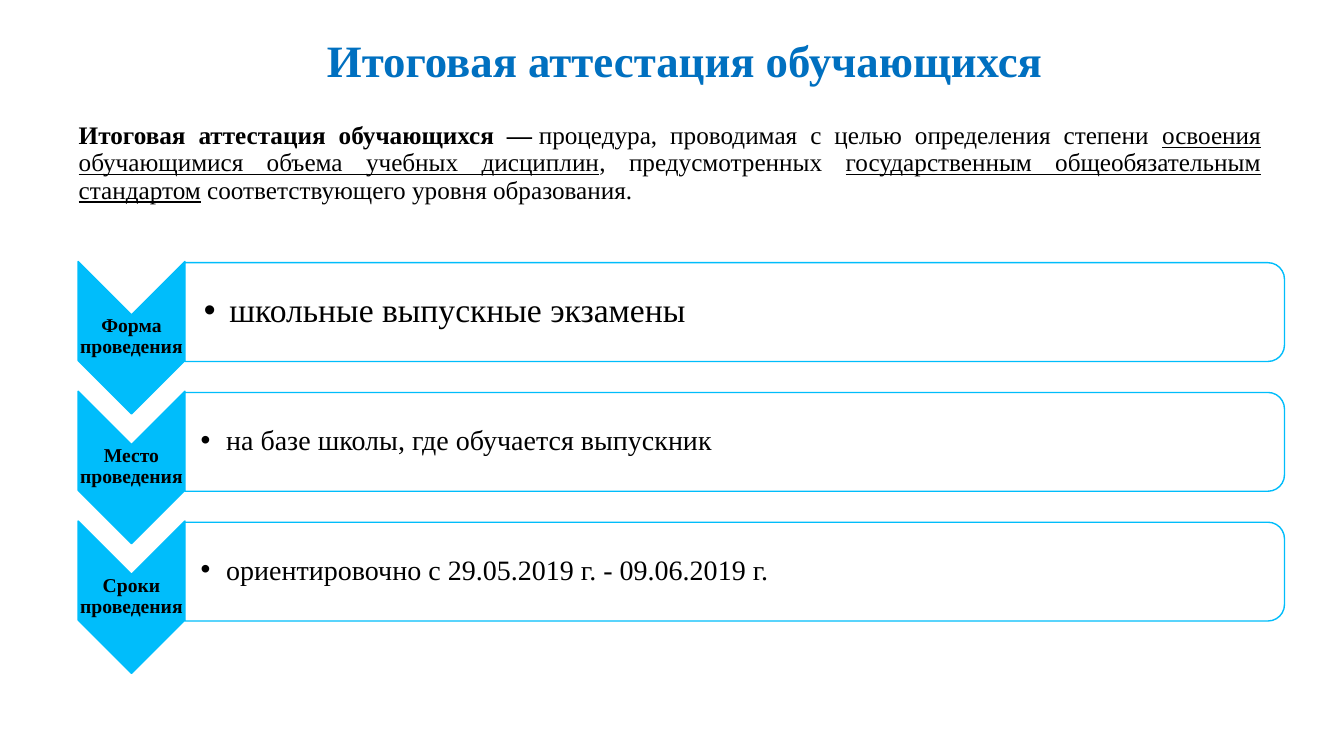
from lxml import etree
from pptx import Presentation
from pptx.dml.color import RGBColor
from pptx.enum.shapes import MSO_SHAPE as Shape
from pptx.enum.text import MSO_ANCHOR as Anchor, MSO_AUTO_SIZE as AutoSize, PP_ALIGN as Align
from pptx.oxml.ns import qn
from pptx.util import Cm, Pt

FONT = "Times New Roman"
BLACK, WHITE, BLUE, CYAN = "000000", "FFFFFF", "0070C0", "00BDFB"

TITLE = "Итоговая аттестация обучающихся"
DEFINITION = [
    ("Итоговая аттестация обучающихся —\u00a0", "bold"),
    ("процедура, проводимая с целью определения степени ", ""),
    ("освоения обучающимися объема учебных дисциплин", "underline"),
    (", предусмотренных ", ""),
    ("государственным общеобязательным стандартом", "underline"),
    (" соответствующего уровня образования.", ""),
]
# label, detail, detail size in points, left inset in cm
STEPS = [
    ("Форма проведения", "школьные выпускные экзамены", 24, 0.48),
    ("Место проведения", "на базе школы, где обучается выпускник", 20, 0.4),
    ("Сроки проведения", "ориентировочно с 29.05.2019 г. - 09.06.2019 г.", 20, 0.4),
]
STEP_PITCH = 3.27


def color(value):
    return RGBColor.from_string(value)


class AttestationPage:
    def __init__(self, deck):
        self.page = deck.slides.add_slide(deck.slide_layouts[1])

    def place(self, shape, left, top, width, height):
        shape.left, shape.top = Cm(left), Cm(top)
        shape.width, shape.height = Cm(width), Cm(height)

    def style_span(self, span, size, tint=BLACK, bold=False, underline=False):
        font = span.font
        font.name, font.size, font.bold, font.underline = FONT, Pt(size), bold, underline
        font.color.rgb = color(tint)

    def style_para(self, para, align, after=0.0):
        para.alignment = align
        para.line_spacing = 0.9
        para.space_before, para.space_after = Pt(0), Pt(after)

    def style_frame(self, frame, anchor):
        frame.word_wrap = True
        frame.auto_size = AutoSize.NONE
        frame.vertical_anchor = anchor

    def set_bullet(self, para, indent, mark=None):
        """Set a hanging bullet, or no bullet when mark is None."""
        props = para._p.get_or_add_pPr()
        props.set("marL", str(Cm(indent)))
        props.set("indent", str(-Cm(indent)))
        if mark:
            etree.SubElement(props, qn("a:buFont")).set("typeface", "Arial")
            etree.SubElement(props, qn("a:buChar")).set("char", mark)
        else:
            etree.SubElement(props, qn("a:buNone"))

    def title(self, text, *area):
        shape = self.page.shapes.title
        self.place(shape, *area)
        frame = shape.text_frame
        frame.text = text
        self.style_frame(frame, Anchor.TOP)
        para = frame.paragraphs[0]
        self.style_para(para, Align.CENTER)
        self.style_span(para.runs[0], 32, BLUE, bold=True)

    def body(self, parts, *area):
        shape = self.page.placeholders[1]
        self.place(shape, *area)
        self.style_frame(shape.text_frame, Anchor.TOP)
        para = shape.text_frame.paragraphs[0]
        self.style_para(para, Align.JUSTIFY, 12)
        self.set_bullet(para, 0)
        for text, style in parts:
            span = para.add_run()
            span.text = text
            self.style_span(span, 18, bold=style == "bold", underline=style == "underline")

    def turned_shape(self, kind, fill, left, top, width, height, opacity=100):
        """Add a shape turned by 90 degrees that covers the given area."""
        shift = (width - height) / 2
        shape = self.page.shapes.add_shape(
            kind, Cm(left + shift), Cm(top - shift), Cm(height), Cm(width))
        shape.rotation = 90
        shape.shadow.inherit = False
        shape.fill.solid()
        shape.fill.fore_color.rgb = color(fill)
        shape.line.color.rgb = color(CYAN)
        shape.line.width = Pt(1)
        if opacity < 100:
            tint = shape._element.spPr.find(qn("a:solidFill"))[0]
            etree.SubElement(tint, qn("a:alpha")).set("val", str(opacity * 1000))

    def text(self, text, area, size, align, inset=0.03, bold=False, bullet=None):
        box = self.page.shapes.add_textbox(*map(Cm, area))
        frame = box.text_frame
        frame.text = text
        self.style_frame(frame, Anchor.MIDDLE)
        frame.margin_left = Cm(inset)
        frame.margin_top = frame.margin_right = frame.margin_bottom = Cm(0.03)
        para = frame.paragraphs[0]
        self.style_para(para, align)
        if bullet:
            self.set_bullet(para, 0.64, bullet)
        self.style_span(para.runs[0], size, bold=bold)

    def step(self, offset, label, detail, size, inset):
        self.turned_shape(Shape.CHEVRON, CYAN, 1.97, 6.59 + offset, 2.69, 3.84)
        self.text(label, (1.97, 7.92 + offset, 2.69, 1.14), 14, Align.CENTER, bold=True)
        self.turned_shape(Shape.ROUND_2_SAME_RECTANGLE, WHITE,
                          4.66, 6.62 + offset, 27.71, 2.49, opacity=90)
        self.text(detail, (4.66, 6.73 + offset, 27.61, 2.24), size, Align.LEFT,
                  inset, bullet="•")


def main():
    deck = Presentation()
    deck.slide_width, deck.slide_height = Cm(33.87), Cm(19.05)
    page = AttestationPage(deck)
    page.title(TITLE, 2.31, 0.84, 29.9, 1.17)
    page.body(DEFINITION, 1.73, 2.97, 30.3, 3.2)
    for index, step in enumerate(STEPS):
        page.step(index * STEP_PITCH, *step)
    deck.save("out.pptx")


if __name__ == "__main__":
    main()
